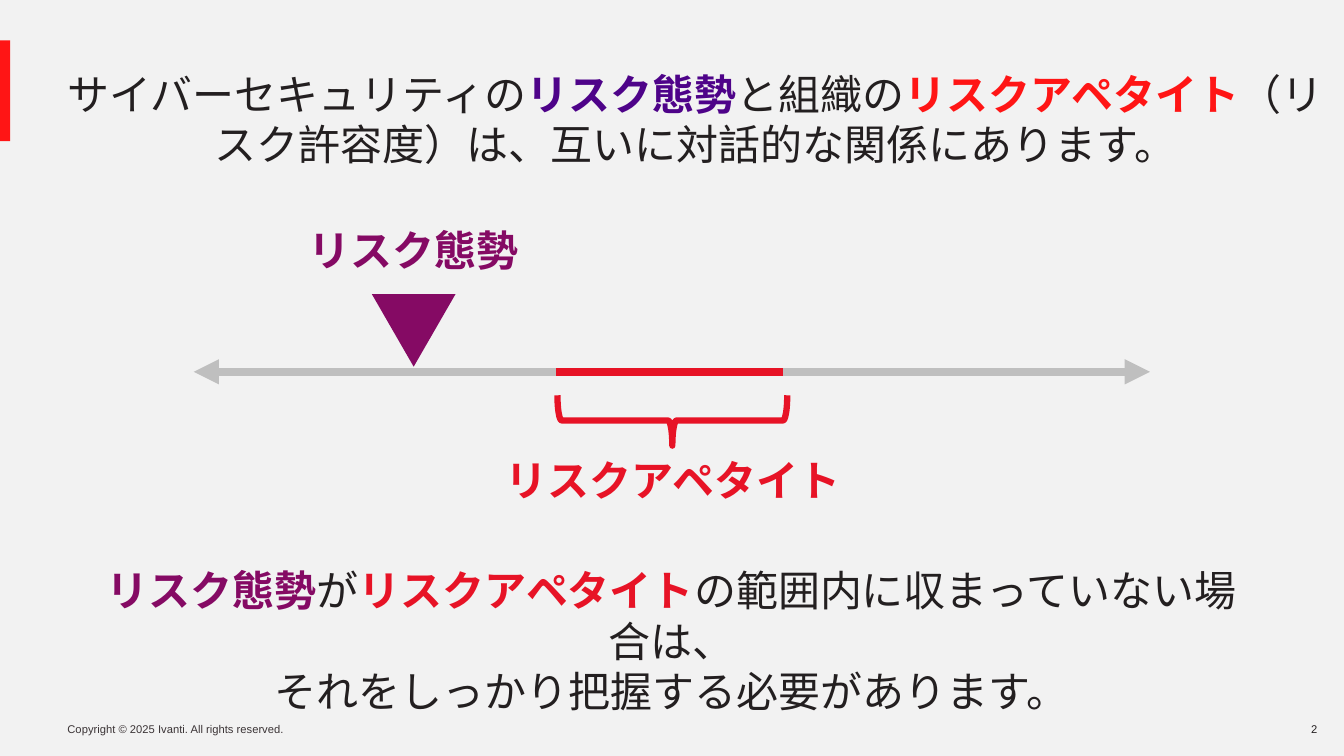
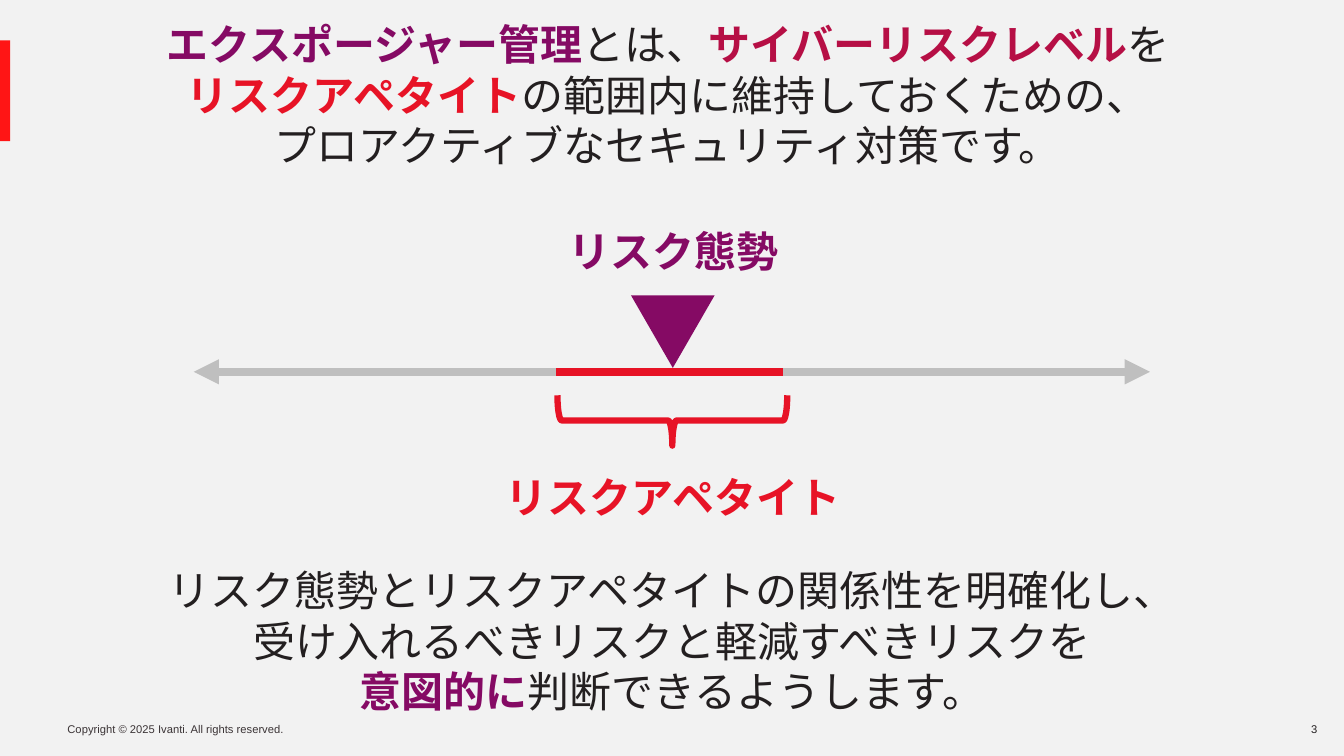
from dataclasses import dataclass

from lxml import etree
from pptx import Presentation
from pptx.dml.color import RGBColor
from pptx.enum.shapes import MSO_CONNECTOR, MSO_SHAPE
from pptx.enum.text import MSO_ANCHOR, PP_ALIGN
from pptx.oxml.ns import qn
from pptx.util import Cm, Pt

STRAIGHT = MSO_CONNECTOR.STRAIGHT
RECTANGLE = MSO_SHAPE.RECTANGLE
TRIANGLE = MSO_SHAPE.ISOSCELES_TRIANGLE
LEFT_BRACE = MSO_SHAPE.LEFT_BRACE
TOP, MIDDLE = MSO_ANCHOR.TOP, MSO_ANCHOR.MIDDLE
LEFT, CENTER, RIGHT = PP_ALIGN.LEFT, PP_ALIGN.CENTER, PP_ALIGN.RIGHT

BACKGROUND = RGBColor(0xF2, 0xF2, 0xF2)
INK = RGBColor(0x23, 0x1F, 0x20)
FOOTER_GRAY = RGBColor(0x3B, 0x34, 0x36)
AXIS_GRAY = RGBColor(0xBF, 0xBF, 0xBF)
BRIGHT_RED = RGBColor(0xFF, 0x15, 0x15)
APPETITE_RED = RGBColor(0xE7, 0x13, 0x26)
CRIMSON = RGBColor(0xB6, 0x0F, 0x45)
PURPLE = RGBColor(0x85, 0x0A, 0x64)
INDIGO = RGBColor(0x4E, 0x03, 0x89)

FOOTER_FONT = "Arial"
BODY_FONT = "Noto Sans CJK JP"
BODY_SIZE = 30
BODY_LINE = Pt(36)
AXIS_Y = 9.37
COPYRIGHT = "Copyright © 2025 Ivanti. All rights reserved."


@dataclass(frozen=True)
class Run:
    text: str
    color: RGBColor = INK
    bold: bool = False


@dataclass(frozen=True)
class Box:
    left: float
    top: float
    width: float
    height: float

    def lengths(self):
        return Cm(self.left), Cm(self.top), Cm(self.width), Cm(self.height)


@dataclass(frozen=True)
class TextStyle:
    font: str
    size: int
    align: PP_ALIGN
    anchor: MSO_ANCHOR
    insets: tuple[float, float, float, float]
    wrap: bool = True


@dataclass(frozen=True)
class RiskSlide:
    number: int
    title_box: Box
    title: list[list[Run]]
    posture_box: Box
    marker_box: Box
    appetite_box: Box
    message_box: Box
    message: list[list[Run]]


TITLE_STYLE = TextStyle(BODY_FONT, BODY_SIZE, CENTER, MIDDLE, (0, 0.2, 0.25, 0))
BODY_STYLE = TextStyle(BODY_FONT, BODY_SIZE, CENTER, TOP, (0.25, 0.23, 0.25, 0.03))
COPYRIGHT_STYLE = TextStyle(FOOTER_FONT, 8, LEFT, TOP, (0, 0.13, 0.25, 0.13), False)
NUMBER_STYLE = TextStyle(FOOTER_FONT, 8, RIGHT, TOP, (0, 0.13, 0.25, 0.13))

POSTURE = Run("リスク態勢", PURPLE, True)
APPETITE = Run("リスクアペタイト", APPETITE_RED, True)

SLIDES = [
    RiskSlide(
        number=2,
        title_box=Box(1.45, 0.94, 32.41, 3.91),
        title=[[
            Run("サイバーセキュリティの"),
            Run("リスク態勢", INDIGO, True),
            Run("と組織の"),
            Run("リスクアペタイト", BRIGHT_RED, True),
            Run("（リスク許容度）は、互いに対話的な関係にあります。"),
        ]],
        posture_box=Box(5.92, 5.44, 8.99, 1.55),
        marker_box=Box(9.37, 7.41, 2.11, 1.83),
        appetite_box=Box(11.71, 11.23, 10.52, 1.55),
        message_box=Box(2.36, 14, 29.13, 2.82),
        message=[
            [POSTURE, Run("が"), APPETITE, Run("の範囲内に収まっていない場合は、")],
            [Run("それをしっかり把握する必要があります。")],
        ],
    ),
    RiskSlide(
        number=3,
        title_box=Box(1.7, 1.5, 30.51, 1.57),
        title=[
            [
                Run("エクスポージャー管理", PURPLE, True),
                Run("とは、"),
                Run("サイバーリスクレベル", CRIMSON, True),
                Run("を"),
            ],
            [APPETITE, Run("の範囲内に維持しておくための、")],
            [Run("プロアクティブなセキュリティ対策です。")],
        ],
        posture_box=Box(12.47, 5.46, 8.99, 1.55),
        marker_box=Box(15.9, 7.44, 2.11, 1.83),
        appetite_box=Box(12.12, 11.66, 9.68, 1.55),
        message_box=Box(3, 14, 27.89, 4.11),
        message=[
            [Run("リスク態勢とリスクアペタイトの関係性を明確化し、")],
            [Run("受け入れるべきリスクと軽減すべきリスクを")],
            [Run("意図的に", PURPLE, True), Run("判断できるようします。")],
        ],
    ),
]


def add_text(slide, box: Box, lines: list[list[Run]], style: TextStyle) -> None:
    frame = slide.shapes.add_textbox(*box.lengths()).text_frame
    frame.word_wrap = style.wrap
    frame.vertical_anchor = style.anchor
    left, top, right, bottom = (Cm(inset) for inset in style.insets)
    frame.margin_left, frame.margin_top = left, top
    frame.margin_right, frame.margin_bottom = right, bottom
    for index, line in enumerate(lines):
        paragraph = frame.add_paragraph() if index else frame.paragraphs[0]
        paragraph.alignment = style.align
        if style.font == BODY_FONT:
            paragraph.line_spacing = BODY_LINE
        for item in line:
            run = paragraph.add_run()
            run.text = item.text
            run.font.name = style.font
            run.font.size = Pt(style.size)
            run.font.bold = item.bold
            run.font.color.rgb = item.color
            properties = run._r.get_or_add_rPr()
            etree.SubElement(properties, qn("a:ea"), typeface=style.font)


def add_filled_shape(slide, kind: MSO_SHAPE, box: Box, color: RGBColor, rotation: int = 0) -> None:
    shape = slide.shapes.add_shape(kind, *box.lengths())
    shape.shadow.inherit = False
    shape.fill.solid()
    shape.fill.fore_color.rgb = color
    shape.line.fill.background()
    shape.rotation = rotation


def add_axis_line(slide, start: float, end: float, color: RGBColor, arrows: bool = False) -> None:
    connector = slide.shapes.add_connector(STRAIGHT, Cm(start), Cm(AXIS_Y), Cm(end), Cm(AXIS_Y))
    connector.line.color.rgb = color
    connector.line.width = Pt(6)
    if arrows:
        line = connector.line._get_or_add_ln()
        for tag in ("a:headEnd", "a:tailEnd"):
            etree.SubElement(line, qn(tag), type="triangle")
    etree.SubElement(connector._element.spPr, qn("a:effectLst"))


def add_brace(slide) -> None:
    brace = slide.shapes.add_shape(LEFT_BRACE, *Box(16.31, 7.7, 1.27, 5.79).lengths())
    brace.shadow.inherit = False
    brace.fill.background()
    brace.line.color.rgb = APPETITE_RED
    brace.line.width = Pt(4.5)
    brace.rotation = 270


def add_frame(slide, number: int) -> None:
    add_text(slide, Box(1.7, 18.06, 5.79, 0.61), [[Run(COPYRIGHT, FOOTER_GRAY)]], COPYRIGHT_STYLE)
    add_filled_shape(slide, RECTANGLE, Box(0, 1.02, 0.26, 2.54), BRIGHT_RED)
    add_text(slide, Box(32.23, 18.06, 1.22, 0.61), [[Run(str(number))]], NUMBER_STYLE)


def add_risk_slide(presentation, content: RiskSlide) -> None:
    slide = presentation.slides.add_slide(presentation.slide_layouts[6])
    add_frame(slide, content.number)
    add_text(slide, content.title_box, content.title, TITLE_STYLE)
    add_axis_line(slide, 4.88, 28.98, AXIS_GRAY, arrows=True)
    add_brace(slide)
    add_axis_line(slide, 14.02, 19.74, APPETITE_RED)
    add_text(slide, content.appetite_box, [[APPETITE]], BODY_STYLE)
    add_filled_shape(slide, TRIANGLE, content.marker_box, PURPLE, rotation=180)
    add_text(slide, content.posture_box, [[POSTURE]], BODY_STYLE)
    add_text(slide, content.message_box, content.message, BODY_STYLE)


def main() -> None:
    presentation = Presentation()
    presentation.slide_width = Cm(33.87)
    presentation.slide_height = Cm(19.05)
    background = presentation.slide_master.background.fill
    background.solid()
    background.fore_color.rgb = BACKGROUND
    for content in SLIDES:
        add_risk_slide(presentation, content)
    presentation.save("out.pptx")


if __name__ == "__main__":
    main()
